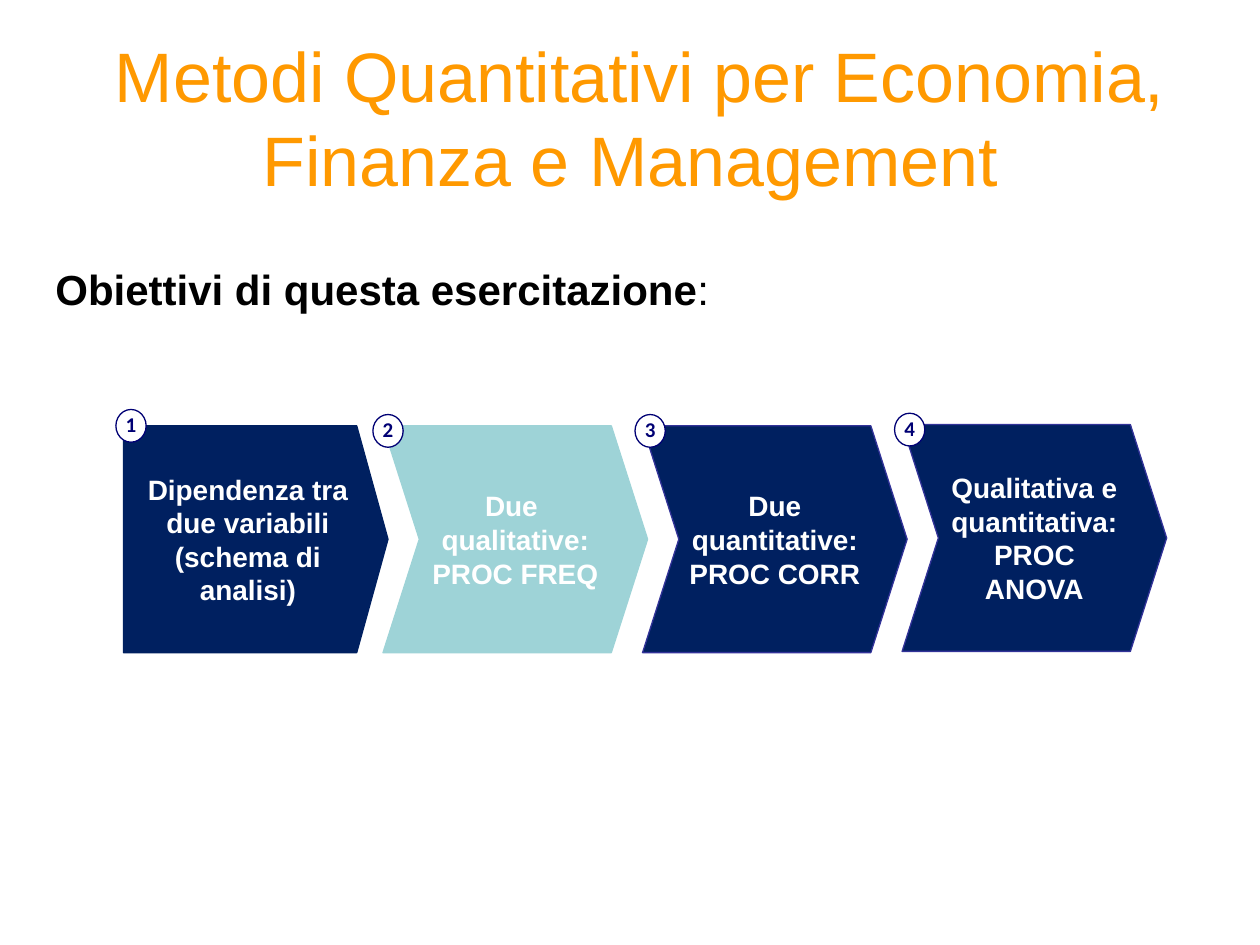
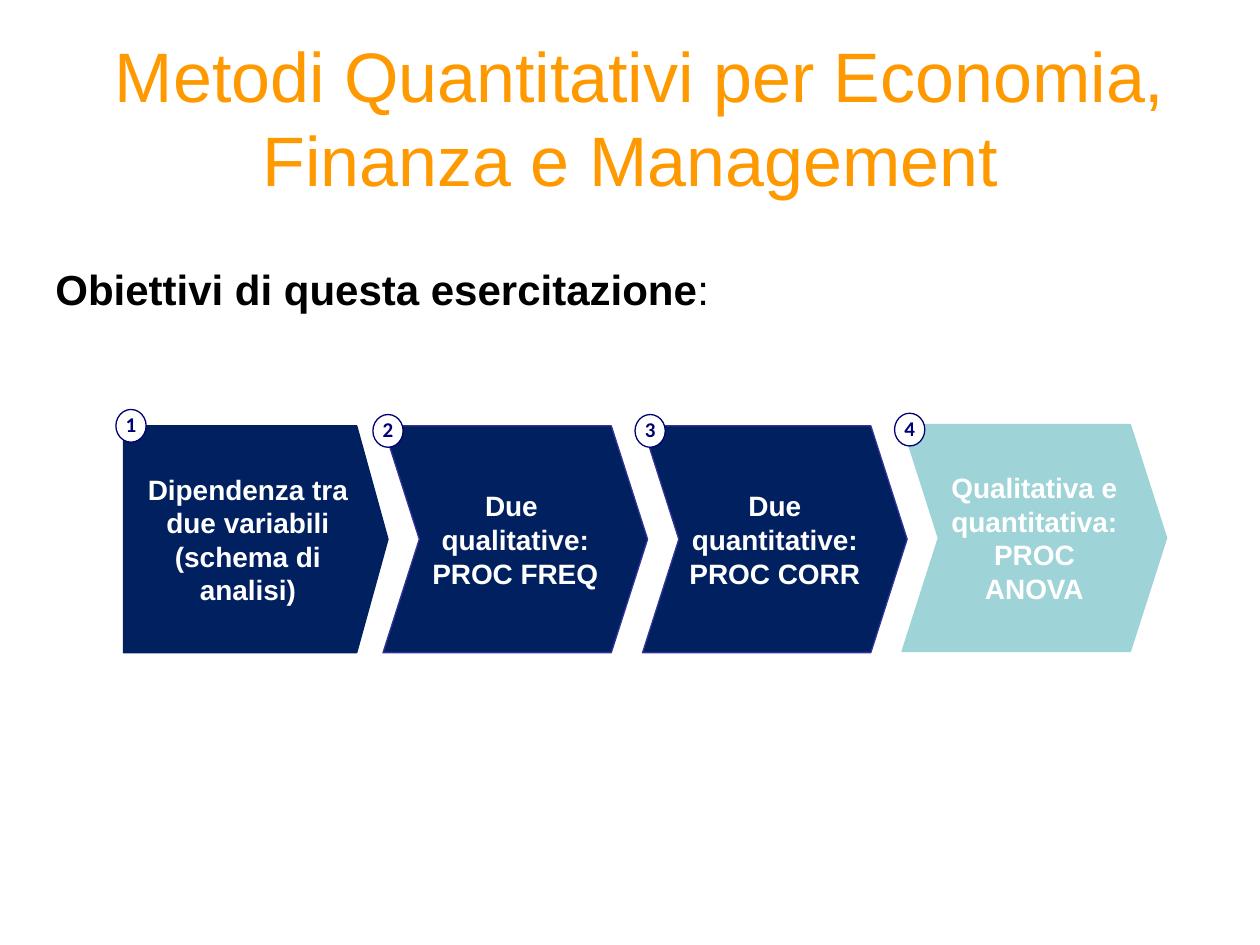
from pptx import Presentation
from pptx.dml.color import RGBColor as RGB
from pptx.enum.shapes import MSO_SHAPE as Kind
from pptx.enum.text import MSO_ANCHOR as Anchor, PP_ALIGN as Align
from pptx.util import Inches as In, Pt

TITLE = " Metodi Quantitativi per Economia, Finanza e Management"
GOAL = ("Obiettivi di questa esercitazione", ":")
STEPS = [
    "Dipendenza tra due variabili (schema di analisi)",
    "Due \vqualitative: PROC FREQ",
    "Due\vquantitative:\vPROC CORR",
    "Qualitativa e quantitativa: PROC ANOVA",
]
ACTIVE = [2, 4]
HUES = {
    "title": "FF9900", "text": "000000", "white": "FFFFFF", "navy": "002060",
    "edge": "333399", "teal": "9ED3D7", "badge": "000074",
}
LEFT, PITCH, WIDE, HIGH = 0.98, 2.06, 2.1, 1.8
TOPS = [3.38, 3.38, 3.38, 3.37]
DOTS = [(0.06, 0.13), (0.08, 0.09), (0.06, 0.09), (0.06, 0.09)]


def hue(name):
    return RGB.from_string(HUES[name])


def style(para, size, color, bold=False, face="Arial"):
    for run in para.runs:
        font = run.font
        font.name, font.size, font.bold = face, Pt(size), bold
        font.color.rgb = hue(color)


def place(shape, *box):
    shape.left, shape.top, shape.width, shape.height = map(In, box)


def draw(slide, kind, box, fill, line, text):
    shape = slide.shapes.add_shape(kind, *map(In, box))
    shape.shadow.inherit = False
    shape.fill.solid()
    shape.fill.fore_color.rgb = hue(fill)
    shape.line.color.rgb = hue(line)
    shape.line.width = Pt(0.75)
    frame = shape.text_frame
    frame.text = text
    frame.vertical_anchor = Anchor.MIDDLE
    frame.paragraphs[0].alignment = Align.CENTER
    return shape


def add_step(slide, num, text, active):
    x, y = LEFT + PITCH * (num - 1), TOPS[num - 1]
    first = num == 1
    fill = "teal" if active else "navy"
    line = fill if active or first else "edge"
    kind = Kind.PENTAGON if first else Kind.CHEVRON
    step = draw(slide, kind, (x, y, WIDE, HIGH), fill, line, text)
    step.adjustments[0] = 0.138 if first else 0.16
    frame = step.text_frame
    frame.word_wrap = True
    frame.margin_left = frame.margin_right = In(0.08)
    frame.margin_top = frame.margin_bottom = In(0.04)
    style(frame.paragraphs[0], 16, "white", True)

    dx, dy = DOTS[num - 1]
    dot = draw(slide, Kind.OVAL, (x - dx, y - dy, 0.24, 0.26),
               "white", "badge", str(num))
    dot.text_frame.word_wrap = False
    para = dot.text_frame.paragraphs[0]
    para.line_spacing = 0.9
    style(para, 12, "badge", True, "Calibri")


def add_slide(deck, active):
    slide = deck.slides.add_slide(deck.slide_layouts[5])
    title = slide.shapes.title
    place(title, 0.5, 0.3, 9, 1.25)
    title.text_frame.text = TITLE
    title.text_frame.vertical_anchor = Anchor.MIDDLE
    para = title.text_frame.paragraphs[0]
    para.alignment = Align.CENTER
    style(para, 40, "title")

    goal = slide.shapes.add_textbox(In(0.25), In(2.04), In(9.5), In(3.5))
    goal.text_frame.word_wrap = True
    goal.text_frame.margin_left = In(0.19)
    para = goal.text_frame.paragraphs[0]
    for part in GOAL:
        para.add_run().text = part
    style(para, 24, "text")
    para.runs[0].font.bold = True

    for num, text in enumerate(STEPS, 1):
        add_step(slide, num, text, num == active)


def main():
    deck = Presentation()
    deck.slide_width, deck.slide_height = In(10), In(7.5)
    for active in ACTIVE:
        add_slide(deck, active)
    deck.save("out.pptx")


if __name__ == "__main__":
    main()
